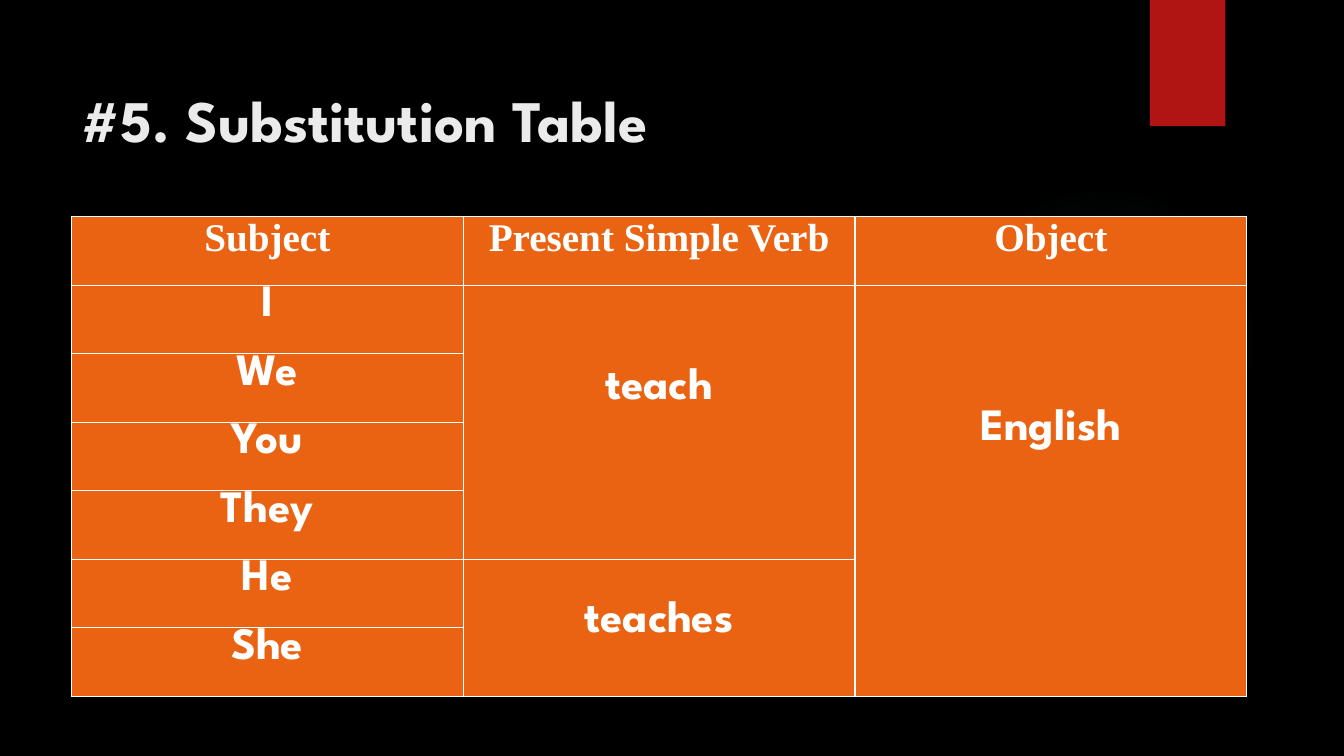
from lxml.etree import SubElement
from pptx import Presentation
from pptx.dml.color import RGBColor
from pptx.enum.shapes import MSO_SHAPE
from pptx.enum.text import MSO_ANCHOR, PP_ALIGN
from pptx.oxml import parse_xml
from pptx.oxml.ns import nsdecls, qn
from pptx.util import Cm, Pt

SANS, SERIF = "League Spartan", "Times New Roman"
WHITE, ORANGE, RED, TEAL = "FFFFFF", "EA6312", "B01513", "50B9C1"
HEADS = ["Subject", "Present Simple Verb", "Object"]
SUBJECTS = ["I", "We", "You", "They", "He", "She"]
# text, first row, last row, column, space above the text in cm
SPANS = [("teach", 1, 4, 1, 2.08), ("teaches", 5, 6, 1, 1.04),
         ("English", 1, 6, 2, 3.12)]


def color(code):
    return RGBColor.from_string(code)


def paint(fill, code):
    fill.solid()
    fill.fore_color.rgb = color(code)


def style(par, size, face, code):
    par.font.color.rgb = color(code)
    for name, value in {"size": Pt(size), "name": face, "bold": True}.items():
        setattr(par.font, name, value)


def add_plain(slide, kind, box):
    shape = slide.shapes.add_shape(kind, *map(Cm, box))
    shape.shadow.inherit = False
    shape.line.fill.background()
    return shape


def add_glow(slide, box):
    """Add a faint round light that fades out from its centre."""
    glow = add_plain(slide, MSO_SHAPE.OVAL, box)
    stops = "".join(
        f'<a:gs pos="{pos * 1000}"><a:srgbClr val="{TEAL}">'
        f'<a:alpha val="{alpha * 1000}"/></a:srgbClr></a:gs>'
        for pos, alpha in [(0, 7), (36, 6), (69, 0)])
    grad = parse_xml(
        f'<a:gradFill {nsdecls("a")}><a:gsLst>{stops}</a:gsLst>'
        '<a:path path="circle"><a:fillToRect l="50000" t="50000" '
        'r="50000" b="50000"/></a:path></a:gradFill>')
    glow.element.spPr.find(qn("a:prstGeom")).addnext(grad)


def add_ribbon(slide, box):
    paint(add_plain(slide, MSO_SHAPE.RECTANGLE, box).fill, RED)


def set_title(slide, text, box):
    title = slide.shapes.title
    for name, value in zip(("left", "top", "width", "height"), box):
        setattr(title, name, Cm(value))
    frame = title.text_frame
    frame.text = text
    frame.vertical_anchor = MSO_ANCHOR.TOP
    frame.margin_top = Cm(0.55)
    par = frame.paragraphs[0]
    par.alignment = PP_ALIGN.LEFT
    par.line_spacing = 1.0
    style(par, 42, SANS, "EBEBEB")


def add_border(cell):
    props = cell._tc.get_or_add_tcPr()
    for spot, side in enumerate(("lnL", "lnR", "lnT", "lnB")):
        line = parse_xml(
            f'<a:{side} {nsdecls("a")} w="12700"><a:solidFill>'
            f'<a:srgbClr val="{WHITE}"/></a:solidFill></a:{side}>')
        props.insert(spot, line)


def write_cell(cell, text, size, face, above=0):
    cell.margin_top = Cm(above)
    par = cell.text_frame.paragraphs[0]
    par.text = text
    par.alignment = PP_ALIGN.CENTER
    style(par, size, face, WHITE)


def add_grid(slide, box):
    left, top, width, height = box
    count, wide = len(SUBJECTS) + 1, len(HEADS)
    table = slide.shapes.add_table(count, wide, *map(Cm, box)).table
    for col in table.columns:
        col.width = Cm(width / wide)
    for row in table.rows:
        row.height = Cm(height / count)
    for cell in table.iter_cells():
        cell.margin_left = cell.margin_right = Cm(0.18)
        cell.margin_top = cell.margin_bottom = 0
        paint(cell.fill, ORANGE)
        add_border(cell)
    for col, text in enumerate(HEADS):
        write_cell(table.cell(0, col), text, 28, SERIF)
    for row, text in enumerate(SUBJECTS, 1):
        write_cell(table.cell(row, 0), text, 32, SANS)
    for text, first, last, col, above in SPANS:
        cell = table.cell(first, col)
        cell.merge(table.cell(last, col))
        write_cell(cell, text, 32, SANS, above)


def main():
    deck = Presentation()
    deck.slide_width, deck.slide_height = Cm(33.87), Cm(19.05)
    slide = deck.slides.add_slide(deck.slide_layouts[5])
    paint(slide.background.fill, "000000")
    add_glow(slide, (23.9, 4.65, 7.82, 7.82))
    add_ribbon(slide, (28.98, 0, 1.9, 3.18))
    set_title(slide, "#5. Substitution Table", (1.8, 1.57, 26.14, 3.89))
    add_grid(slide, (1.8, 5.46, 29.62, 12.09))
    deck.save("out.pptx")


if __name__ == "__main__":
    main()
